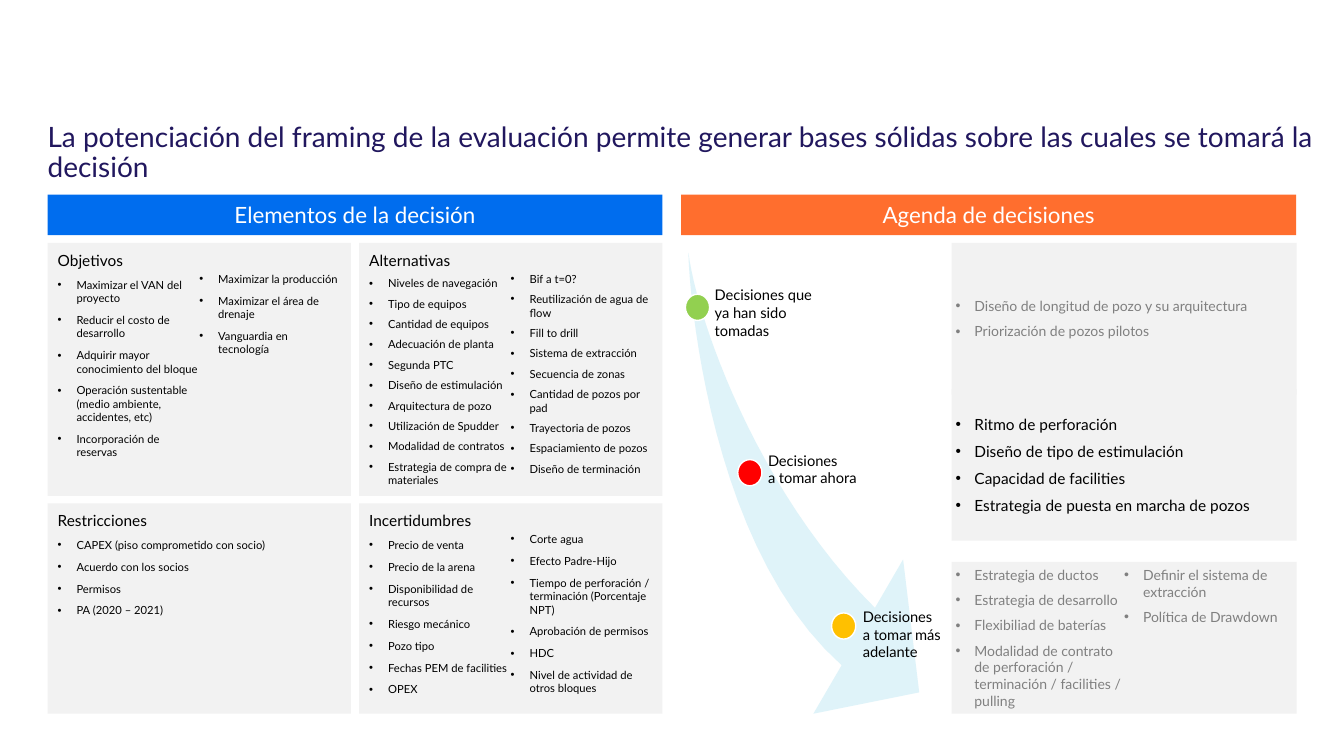
"""Build the slide on decision framing and the decision agenda."""
from lxml import etree
from pptx import Presentation
from pptx.dml.color import RGBColor
from pptx.enum import shapes, text
from pptx.oxml import ns
from pptx.util import Pt

FONT = "Lato"
BLACK, WHITE, GRAY, PANEL = "000000", "FFFFFF", "808080", "F2F2F2"
TITLE = ("La potenciación del framing de la evaluación permite generar bases "
         "sólidas sobre las cuales se tomará la decisión")
HEADERS = [("Elementos de la decisión", "006DEE"), ("Agenda de decisiones", "FF6E2E")]

ELEMENTS = [
    ("Objetivos", 6,
     ["Maximizar el VAN del proyecto", "Reducir el costo de desarrollo",
      "Adquirir mayor conocimiento del bloque",
      "Operación sustentable (medio ambiente, accidentes, etc)",
      "Incorporación de reservas"],
     ["Maximizar la producción", "Maximizar el área de drenaje",
      "Vanguardia en tecnología"]),
    ("Alternativas", 5,
     ["Niveles de navegación", "Tipo de equipos", "Cantidad de equipos",
      "Adecuación de planta", "Segunda PTC", "Diseño de estimulación",
      "Arquitectura de pozo", "Utilización de Spudder", "Modalidad de contratos",
      "Estrategia de compra de materiales"],
     ["Bif a t=0?", "Reutilización de agua de flow", "Fill to drill",
      "Sistema de extracción", "Secuencia de zonas", "Cantidad de pozos por pad",
      "Trayectoria de pozos", "Espaciamiento de pozos", "Diseño de terminación"]),
    ("Restricciones", 6,
     ["CAPEX (piso comprometido con socio)", "Acuerdo con los socios", "Permisos",
      "PA (2020 – 2021)"], []),
    ("Incertidumbres", 6,
     ["Precio de venta", "Precio de la arena", "Disponibilidad de recursos",
      "Riesgo mecánico", "Pozo tipo", "Fechas PEM de facilities", "OPEX"],
     ["Corte agua", "Efecto Padre-Hijo",
      "Tiempo de perforación / terminación (Porcentaje NPT)",
      "Aprobación de permisos", "HDC", "Nivel de actividad de otros bloques"]),
]
AGENDA = [
    (277.9, 11, BLACK, 1,
     ["Ritmo de perforación", "Diseño de tipo de estimulación",
      "Capacidad de facilities", "Estrategia de puesta en marcha de pozos"]),
    (173.5, 10, GRAY, 1,
     ["Diseño de longitud de pozo y su arquitectura", "Priorización de pozos pilotos"]),
    (401.4, 10, GRAY, 2,
     ["Estrategia de ductos", "Estrategia de desarrollo", "Flexibiliad de baterías",
      "Modalidad de contrato de perforación / terminación / facilities / pulling",
      "Definir el sistema de extracción", "Política de Drawdown"]),
]
MILESTONES = [
    ((489.6, 210.2), "92D050", (510.5, 204.5, 77.8, 38), ["Decisiones que ya han sido tomadas"]),
    ((527, 328.3), "FF0000", (548.6, 322.6, 77.8, 25.2), ["Decisiones", "a tomar ahora"]),
    ((594, 437.8), "FFC000", (616.3, 434.2, 60.5, 38), ["Decisiones", "a tomar más adelante"]),
]
OUTER_CURVE = [(491.8, 180.7), (497.5, 226.8), (540, 349.9), (625, 434.2)]
ARROW_HEAD = [(645.1, 399.6), (656.6, 494.6), (581, 509.8)]
INNER_CURVE = [(601.2, 475.2), (499, 384.5), (491, 180), (491.8, 180.7)]

LEFT, RIGHT, HALF, GAP = 34, 486.6, 439.2, 5.8
PANEL_WIDTH = (HALF - GAP) / 2
ROWS = [(173.5, 180.7), (359.5, 150.3)]
INSET, INDENT, COLUMN_TOP = 7.2, 13.5, 20.8
COLUMN = PANEL_WIDTH / 2 - INSET
AGENDA_LEFT, AGENDA_WIDTH, AGENDA_HEIGHT = 679.7, 246.6, 108.4
CURVE_STEPS = 24


def color(value):
    return RGBColor.from_string(value)


def place(shape, left, top, width, height):
    shape.left, shape.top, shape.width, shape.height = map(Pt, (left, top, width, height))


def paint(shape, fill, line=None):
    shape.shadow.inherit = False
    shape.fill.solid()
    shape.fill.fore_color.rgb = color(fill)
    if line:
        shape.line.color.rgb = color(line)
        shape.line.width = Pt(1)
    else:
        shape.line.fill.background()


def add_shape(slide, kind, box, fill, line=None):
    shape = slide.shapes.add_shape(kind, *map(Pt, box))
    paint(shape, fill, line)
    return shape


def frame_of(shape, insets, anchor=text.MSO_ANCHOR.TOP):
    frame = shape.text_frame
    frame.word_wrap = True
    frame.auto_size = text.MSO_AUTO_SIZE.NONE
    frame.vertical_anchor = anchor
    (frame.margin_left, frame.margin_top,
     frame.margin_right, frame.margin_bottom) = map(Pt, insets)
    return frame


def write(paragraph, lines, size, ink, align=text.PP_ALIGN.LEFT):
    paragraph.alignment = align
    for number, line in enumerate(lines):
        if number:
            paragraph.add_line_break()
        run = paragraph.add_run()
        run.text = line
        run.font.name, run.font.size, run.font.bold = FONT, Pt(size), False
        run.font.color.rgb = color(ink)


def set_bullet(paragraph, character=None):
    properties = paragraph._p.get_or_add_pPr()
    indent = Pt(INDENT) if character else 0
    properties.set("marL", str(indent))
    properties.set("indent", str(-indent))
    if character:
        font = etree.SubElement(properties, ns.qn("a:buFont"))
        font.set("typeface", "Arial")
        etree.SubElement(properties, ns.qn("a:buChar")).set("char", character)
    else:
        etree.SubElement(properties, ns.qn("a:buNone"))


def write_list(frame, items, size, ink, gap, heading=None):
    entries = ([(heading, 11, None)] if heading else []) + [(item, size, "•") for item in items]
    for number, (entry, entry_size, character) in enumerate(entries):
        paragraph = frame.add_paragraph() if number else frame.paragraphs[0]
        set_bullet(paragraph, character)
        paragraph.space_before = Pt(gap if number else 0)
        write(paragraph, [entry], entry_size, ink)


def bezier(points):
    for step in range(CURVE_STEPS + 1):
        t = step / CURVE_STEPS
        weights = ((1 - t) ** 3, 3 * t * (1 - t) ** 2, 3 * t * t * (1 - t), t ** 3)
        yield tuple(sum(w * p[axis] for w, p in zip(weights, points)) for axis in (0, 1))


def add_elements(slide):
    panels = [shape for shape in slide.placeholders if shape.placeholder_format.idx]
    for number, (panel, element) in enumerate(zip(panels, ELEMENTS)):
        heading, gap, first, second = element
        left = LEFT + number % 2 * (PANEL_WIDTH + GAP)
        top, height = ROWS[number // 2]
        place(panel, left, top, PANEL_WIDTH, height)
        paint(panel, PANEL)
        right_inset = INSET + (COLUMN if second else 0)
        frame = frame_of(panel, (INSET, 5.8, right_inset, 0))
        write_list(frame, first, 8, BLACK, gap, heading)
        if second:
            box = (left + PANEL_WIDTH / 2, top + COLUMN_TOP, COLUMN, height - COLUMN_TOP)
            column = slide.shapes.add_textbox(*map(Pt, box))
            write_list(frame_of(column, (0, 0, 0, 0)), second, 8, BLACK, gap)


def add_agenda(slide):
    for top, size, ink, columns, items in AGENDA:
        box = (AGENDA_LEFT, top, AGENDA_WIDTH, AGENDA_HEIGHT)
        shape = add_shape(slide, shapes.MSO_SHAPE.RECTANGLE, box, PANEL)
        frame = frame_of(shape, (2.9,) * 4, text.MSO_ANCHOR.MIDDLE)
        if columns > 1:
            frame._txBody.bodyPr.set("numCol", str(columns))
        write_list(frame, items, size, ink, 6)


def add_timeline(slide):
    outline = [*bezier(OUTER_CURVE), *ARROW_HEAD, *bezier(INNER_CURVE)]
    points = [(Pt(x), Pt(y)) for x, y in outline]
    builder = slide.shapes.build_freeform(*points[0])
    builder.add_line_segments(points[1:], close=True)
    paint(builder.convert_to_shape(), "DFF3F9")
    for (left, top), fill, box, lines in MILESTONES:
        add_shape(slide, shapes.MSO_SHAPE.OVAL, (left, top, 17.3, 18.7), fill, WHITE)
        label = slide.shapes.add_textbox(*map(Pt, box))
        write(frame_of(label, (0, 0, 0, 0)).paragraphs[0], lines, 10.5, BLACK)


def main():
    presentation = Presentation()
    presentation.slide_width, presentation.slide_height = Pt(960), Pt(540)
    slide = presentation.slides.add_slide(presentation.slide_layouts[4])
    title = slide.shapes.title
    place(title, LEFT, 84.2, 915, 51)
    paragraph = frame_of(title, (0, 3.6, 0, 3.6)).paragraphs[0]
    paragraph.line_spacing = 0.9
    write(paragraph, [TITLE], 20, "21175E")
    add_elements(slide)
    for left, (header, fill) in zip((LEFT, RIGHT), HEADERS):
        shape = add_shape(slide, shapes.MSO_SHAPE.RECTANGLE, (left, 139, HALF, 29), fill)
        frame = frame_of(shape, (7.2, 3.6, 7.2, 3.6), text.MSO_ANCHOR.MIDDLE)
        write(frame.paragraphs[0], [header], 16, WHITE, text.PP_ALIGN.CENTER)
    add_agenda(slide)
    add_timeline(slide)
    presentation.save("out.pptx")


if __name__ == "__main__":
    main()
